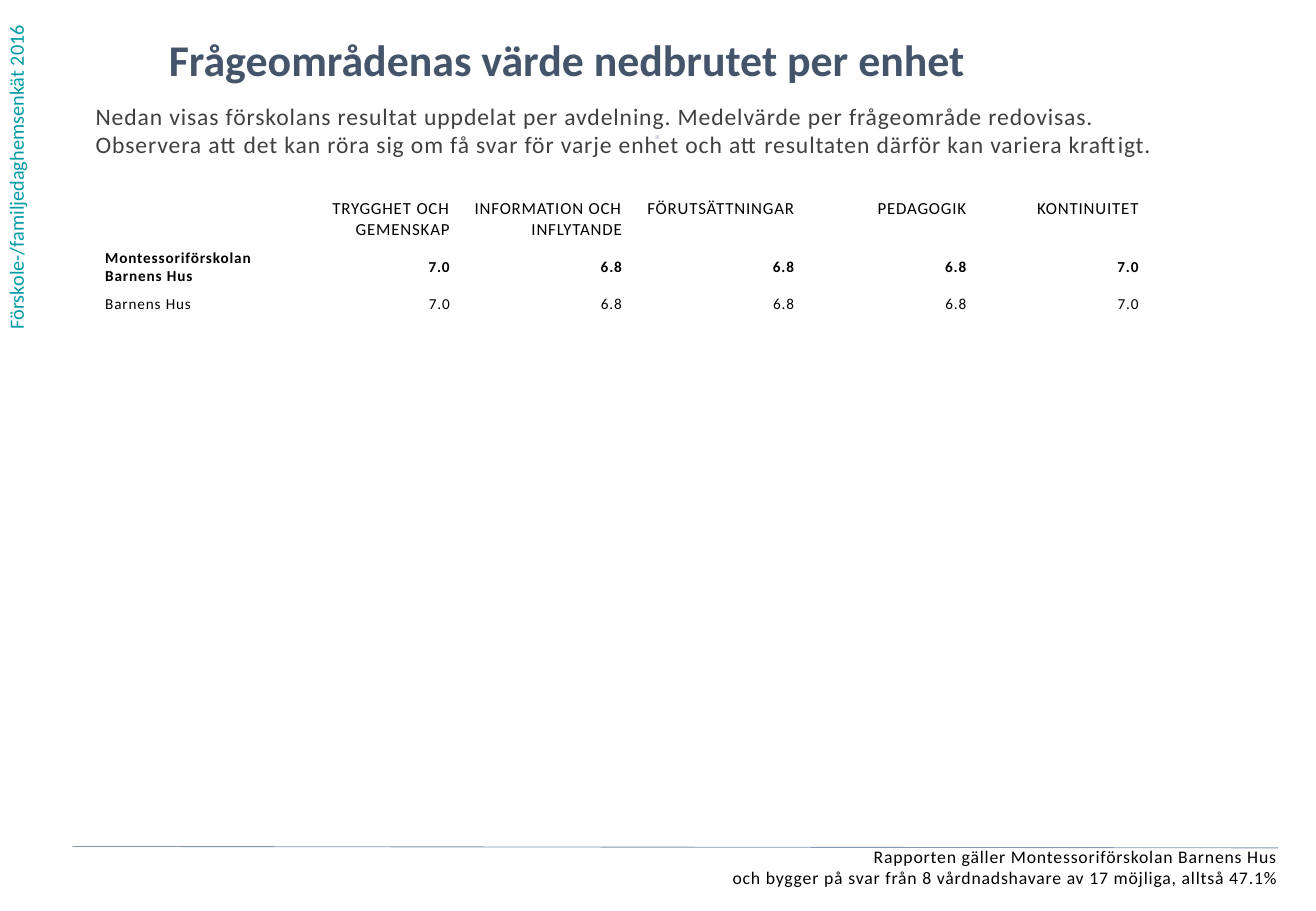
"""Build the survey slide with question-area values per unit."""
from dataclasses import dataclass

from lxml.etree import SubElement
from pptx import Presentation
from pptx.dml.color import RGBColor
from pptx.enum.shapes import MSO_CONNECTOR
from pptx.enum.text import MSO_ANCHOR as Anchor, PP_ALIGN as Align
from pptx.oxml.ns import qn
from pptx.util import Cm, Pt

FONT = "Calibri"
TEAL = RGBColor(0x00, 0x9B, 0xA4)
SLATE = RGBColor(0x44, 0x54, 0x6A)
GREY = RGBColor(0x40, 0x40, 0x40)
PALE = RGBColor(0xD2, 0xD9, 0xE2)
RULE = RGBColor(0x84, 0x97, 0xB0)
BLACK = RGBColor(0x00, 0x00, 0x00)
WHITE = RGBColor(0xFF, 0xFF, 0xFF)


@dataclass(frozen=True)
class Style:
    size: float
    color: RGBColor = BLACK
    bold: bool = False
    tracking: int = 50
    align: Align = Align.LEFT


@dataclass(frozen=True)
class Label:
    text: str
    left: float
    top: float
    width: float
    height: float
    style: Style
    inset: bool = False
    vert: str = "horz"


@dataclass(frozen=True)
class Row:
    cells: tuple[str, ...]
    size: float
    anchor: Anchor = Anchor.MIDDLE
    bold: bool = False


LABELS = (
    Label("Förskole-/familjedaghemsenkät 2016", -0.05, 0, 1.02, 7.14,
          Style(12, TEAL, tracking=0), inset=True, vert="vert270"),
    Label("Frågeområdenas värde nedbrutet per enhet", 3.53, 0.69, 21.18, 1.45,
          Style(26, SLATE, bold=True, tracking=0)),
    Label("Nedan visas förskolans resultat uppdelat per avdelning. "
          "Medelvärde per frågeområde redovisas.\v"
          "Observera att det kan röra sig om få svar för varje enhet "
          "och att resultaten därför kan variera kraftigt.",
          2, 2.13, 24.03, 1.4, Style(14, GREY)),
    Label("Rapporten gäller Montessoriförskolan Barnens Hus\v"
          "och bygger på svar från 8 vårdnadshavare av 17 möjliga, alltså 47.1%",
          0.3, 17.68, 26.42, 1.09, Style(10.5, align=Align.RIGHT)),
    Label("⋅", 9.83, 2.59, 7.82, 0.99,
          Style(12, PALE, bold=True, align=Align.CENTER)),
)

ROWS = (
    Row(("", "TRYGGHET OCH GEMENSKAP", "INFORMATION OCH INFLYTANDE",
         "FÖRUTSÄTTNINGAR", "PEDAGOGIK", "KONTINUITET", ""), 10, Anchor.TOP),
    Row(("Montessoriförskolan Barnens Hus", "7.0", "6.8", "6.8", "6.8", "7.0", ""),
        9, bold=True),
    Row(("Barnens Hus", "7.0", "6.8", "6.8", "6.8", "7.0", ""), 9),
)
NAME_WIDTH, VALUE_WIDTH, ROW_HEIGHT = 4, 3.6, 0.28


def write(tf, text: str, style: Style) -> None:
    p = tf.paragraphs[0]
    p.text = text
    p.alignment = style.align
    font = p.font
    font.name, font.size, font.bold = FONT, Pt(style.size), style.bold
    font.color.rgb = style.color
    p._p.pPr.find(qn("a:defRPr")).set("spc", str(style.tracking))
    if not text:
        SubElement(p._p, qn("a:endParaRPr"), sz=str(int(style.size * 100)))


def add_label(s, label: Label) -> None:
    sp = s.shapes.add_textbox(Cm(label.left), Cm(label.top),
                              Cm(label.width), Cm(label.height))
    tf = sp.text_frame
    tf.word_wrap = True
    tf._txBody.bodyPr.set("vert", label.vert)
    if not label.inset:
        tf.margin_left = tf.margin_right = tf.margin_top = tf.margin_bottom = 0
    write(tf, label.text, label.style)


def add_values(s) -> None:
    widths = [NAME_WIDTH] + [VALUE_WIDTH] * (len(ROWS[0].cells) - 1)
    table = s.shapes.add_table(len(ROWS), len(widths), Cm(2), Cm(4.06),
                               Cm(sum(widths)), Cm(ROW_HEIGHT * len(ROWS))).table
    table.first_row = table.horz_banding = False
    for col, width in zip(table.columns, widths):
        col.width = Cm(width)
    for i, row in enumerate(ROWS):
        table.rows[i].height = Cm(ROW_HEIGHT)
        for j, text in enumerate(row.cells):
            cell = table.cell(i, j)
            cell.fill.solid()
            cell.fill.fore_color.rgb = WHITE
            cell.vertical_anchor = row.anchor
            cell.margin_left = cell.margin_right = Cm(0.2)
            cell.margin_top = cell.margin_bottom = Cm(0.1)
            align = Align.RIGHT if j else Align.LEFT
            write(cell.text_frame, text, Style(row.size, bold=row.bold, align=align))


def add_rule(s) -> None:
    line = s.shapes.add_connector(MSO_CONNECTOR.STRAIGHT,
                                  Cm(1.52), Cm(17.7), Cm(26.72), Cm(17.73))
    line.line.color.rgb = RULE
    line.line.width = Pt(0.5)
    SubElement(line._element.spPr, qn("a:effectLst"))


def main() -> None:
    prs = Presentation()
    prs.slide_width, prs.slide_height = Cm(27.51), Cm(19.05)
    s = prs.slides.add_slide(prs.slide_layouts[6])
    for label in LABELS:
        add_label(s, label)
    add_values(s)
    add_rule(s)
    prs.save("out.pptx")


if __name__ == "__main__":
    main()
